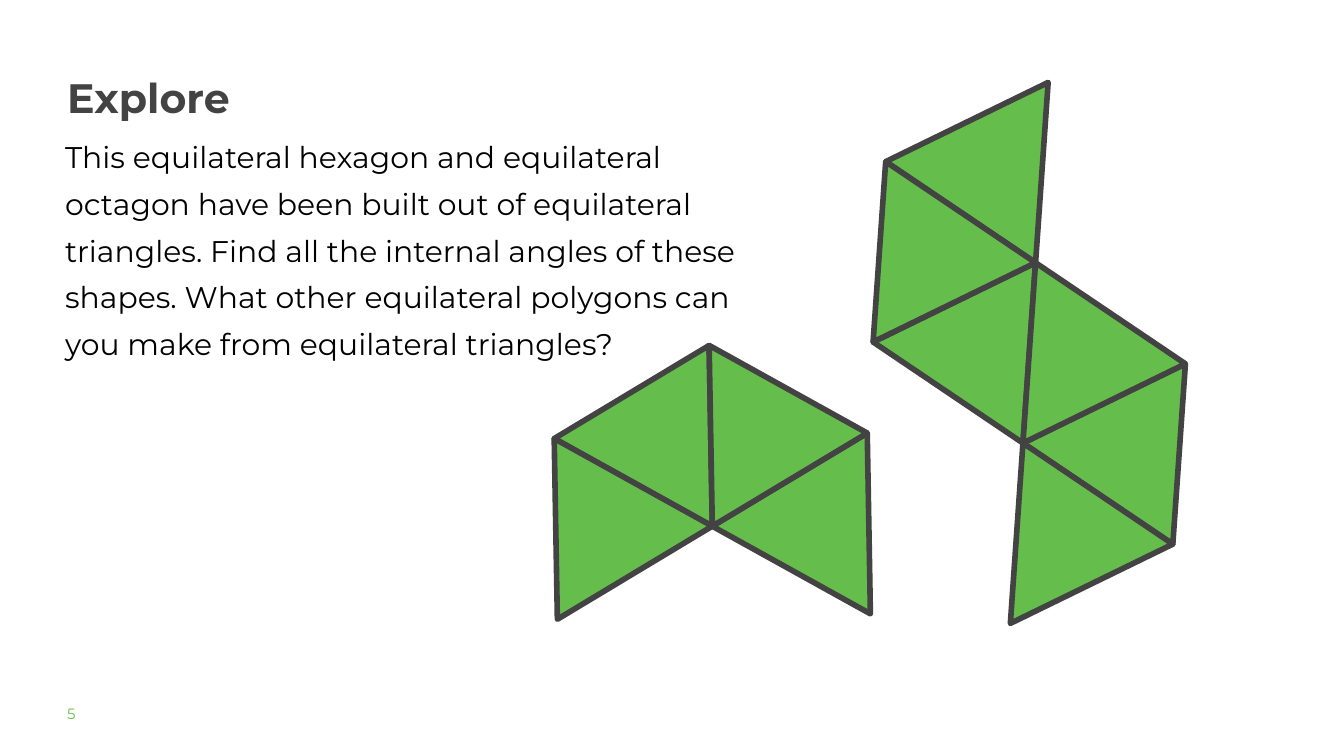
from dataclasses import dataclass
from math import cos, radians, sin, sqrt

from lxml.etree import SubElement
from pptx import Presentation
from pptx.dml.color import RGBColor
from pptx.enum.shapes import MSO_SHAPE
from pptx.oxml.ns import qn
from pptx.util import Inches, Pt

COLS, ROWS = 20, 11.25  # grid of one-inch cells
COLORS = {"green": "65BE4B", "dark": "434343", "black": "000000"}
FONT = "Montserrat"
SIDE = 2.69
HEIGHT = SIDE * sqrt(3) / 2


@dataclass(frozen=True)
class Tile:
    """A triangle whose apex is u, v lattice steps from the polygon's hub."""
    u: int
    v: int
    turn: int


@dataclass(frozen=True)
class Polygon:
    col: float
    row: float
    tilt: int
    tiles: tuple[Tile, ...]


POLYGONS = (
    # hexagon
    Polygon(10.6, 7.83, 29, (
        Tile(1, 0, 120), Tile(0, 0, 120), Tile(0, 0, 180), Tile(-1, 1, 180),
    )),
    # octagon
    Polygon(15.41, 3.91, 34, (
        Tile(1, 0, 0), Tile(0, -1, 0), Tile(0, 0, 0),
        Tile(0, 0, 60), Tile(1, 0, 60), Tile(1, 1, 60),
    )),
)


def color(name: str) -> RGBColor:
    return RGBColor.from_string(COLORS[name])


def add_text(s, text: str, col: float, row: float, cols: float, rows: float, *,
             size: int, fill: str, bold: bool = False, spacing: float = 1.0,
             inset: tuple[float, float] = (0, 0)) -> None:
    tf = s.shapes.add_textbox(*map(Inches, (col, row, cols, rows))).text_frame
    tf.word_wrap = True
    tf.margin_left = tf.margin_right = Inches(inset[0])
    tf.margin_top = tf.margin_bottom = Inches(inset[1])
    p = tf.paragraphs[0]
    p.line_spacing = spacing
    r = p.add_run()
    r.text = text
    r.font.name, r.font.size, r.font.bold = FONT, Pt(size), bold
    r.font.color.rgb = color(fill)


def add_tile(group, polygon: Polygon, tile: Tile) -> None:
    along, across = radians(polygon.tilt), radians(polygon.tilt + 60)
    apex_x = polygon.col + SIDE * (tile.u * cos(along) + tile.v * cos(across))
    apex_y = polygon.row + SIDE * (tile.u * sin(along) + tile.v * sin(across))
    rotation = polygon.tilt + tile.turn
    x = apex_x - HEIGHT / 2 * sin(radians(rotation))
    y = apex_y + HEIGHT / 2 * cos(radians(rotation))
    sp = group.shapes.add_shape(
        MSO_SHAPE.ISOSCELES_TRIANGLE,
        *map(Inches, (x - SIDE / 2, y - HEIGHT / 2, SIDE, HEIGHT)))
    sp.rotation = rotation
    sp.shadow.inherit = False
    sp.fill.solid()
    sp.fill.fore_color.rgb = color("green")
    sp.line.color.rgb = color("dark")
    sp.line.width = Pt(6)
    SubElement(sp.line._get_or_add_ln(), qn("a:round"))


def main() -> None:
    prs = Presentation()
    prs.slide_width, prs.slide_height = Inches(COLS), Inches(ROWS)
    s = prs.slides.add_slide(prs.slide_layouts[6])
    add_text(s, "Explore", 1, 0.97, 14.44, 1.78,
             size=44, fill="dark", bold=True, spacing=1.15)
    add_text(s, "5", 1, 10.48, 1.57, 0.39, size=16, fill="green")
    for polygon in POLYGONS:
        group = s.shapes.add_group_shape()
        for tile in polygon.tiles:
            add_tile(group, polygon, tile)
    add_text(s, "This equilateral hexagon and equilateral octagon have been built "
                "out of equilateral triangles. Find all the internal angles of "
                "these shapes. What other equilateral polygons can you make from "
                "equilateral triangles?",
             0.87, 1.86, 10.94, 3.54,
             size=32, fill="black", spacing=1.3, inset=(0.1, 0.05))
    prs.save("out.pptx")


if __name__ == "__main__":
    main()
